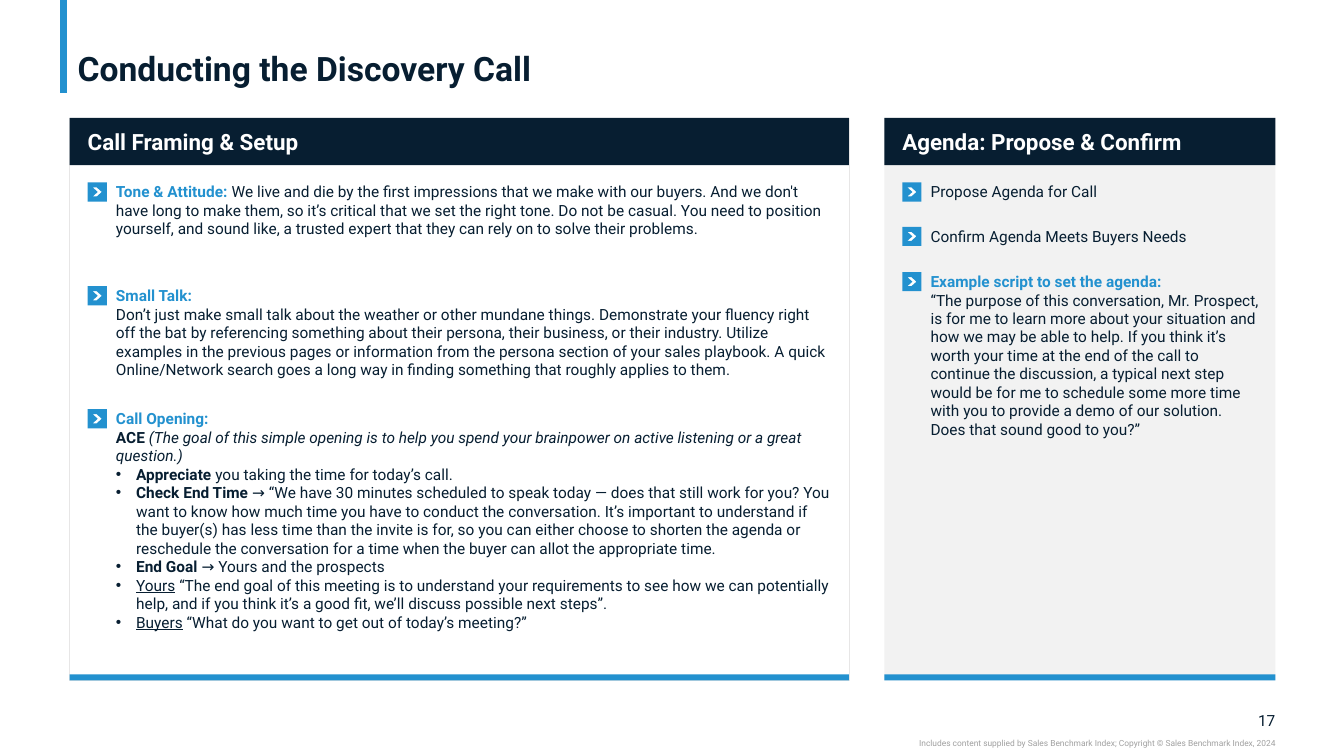
from lxml.etree import SubElement
from pptx import Presentation
from pptx.dml.color import RGBColor
from pptx.enum.shapes import MSO_CONNECTOR, MSO_SHAPE
from pptx.enum.text import MSO_ANCHOR, MSO_AUTO_SIZE, PP_ALIGN
from pptx.oxml.ns import qn
from pptx.util import Inches, Pt

FONT = "Roboto"
NAVY, BLUE, WHITE, PALE, RULE, GREY = "071E31", "2391CF", "FFFFFF", "F2F2F2", "E7E6E6", "A0A0A0"

TITLE = "Conducting the Discovery Call"
PAGE_NUMBER = "17"
CREDIT = "Includes content supplied by Sales Benchmark Index; Copyright © Sales Benchmark Index, 2024"

# Each paragraph is (list level, runs); each run is (text, style).
TONE = [
    (0, [("Tone & Attitude: ", "heading"),
         ("We live and die by the first impressions that we make with our buyers. And we don't have long "
          "to make them, so it’s critical that we set the right tone. Do not be casual. You need to "
          "position yourself, and sound like, a trusted expert that they can rely on to solve their "
          "problems.", "plain")]),
]
SMALL_TALK = [
    (0, [("Small Talk:", "heading")]),
    (0, [("Don’t just make small talk about the weather or other mundane things. Demonstrate your fluency "
          "right off the bat by referencing something about their persona, their business, or their "
          "industry. Utilize examples in the previous pages or information from the persona section of "
          "your sales playbook. A quick Online/Network search goes a long way in finding something that "
          "roughly applies to them.", "plain")]),
]
CALL_OPENING = [
    (0, [("Call Opening:", "heading")]),
    (0, [("ACE ", "bold"),
         ("(The goal of this simple opening is to help you spend your brainpower on active listening or "
          "a great question.)", "italic")]),
    (1, [("Appreciate", "bold"), (" you taking the time for today’s call.", "plain")]),
    (1, [("Check End Time ", "bold"),
         ("→ “We have 30 minutes scheduled to speak today — does that still work for you? You want to "
          "know how much time you have to conduct the conversation. It’s important to understand if the "
          "buyer(s) has less time than the invite is for, so you can either choose to shorten the agenda "
          "or reschedule the conversation for a time when the buyer can allot the appropriate time.",
          "plain")]),
    (1, [("End Goal ", "bold"), ("→ Yours and the prospects", "plain")]),
    (2, [("Yours", "underline"),
         (" “The end goal of this meeting is to understand your requirements to see how we can "
          "potentially help, and if you think it’s a good fit, we’ll discuss possible next steps”.",
          "plain")]),
    (2, [("Buyers", "underline"), (" “What do you want to get out of today’s meeting?”", "plain")]),
]
SCRIPT = [
    (0, [("Example script to set the agenda:", "heading")]),
    (0, [("“The purpose of this conversation, Mr. Prospect, is for me to learn more about your situation "
          "and how we may be able to help. If you think it’s worth your time at the end of the call to "
          "continue the discussion, a typical next step would be for me to schedule some more time with "
          "you to provide a demo of our solution. Does that sound good to you?”", "plain")]),
]

# Items are (top, height, paragraphs), in inches.
PANELS = [
    {"heading": "Call Framing & Setup", "left": 0.69, "width": 7.73, "fill": WHITE, "border": RULE,
     "items": [(1.81, 0.56, TONE), (2.84, 0.93, SMALL_TALK), (4.06, 2.41, CALL_OPENING)]},
    {"heading": "Agenda: Propose & Confirm", "left": 8.77, "width": 3.88, "fill": PALE, "border": None,
     "items": [(1.81, 0.19, [(0, [("Propose Agenda for Call", "plain")])]),
               (2.25, 0.19, [(0, [("Confirm Agenda Meets Buyers Needs", "plain")])]),
               (2.7, 1.67, SCRIPT)]},
]
PANEL_TOP, PANEL_HEIGHT, HEADER_HEIGHT, FOOT_HEIGHT = 1.17, 5.58, 0.47, 0.06
PADDING, ICON_SIZE, ICON_MARGIN, TEXT_INDENT, BULLET_INDENT = 0.18, 0.19, 0.02, 0.46, 0.2
RIGHT_EDGE = 12.65
CHEVRON = [(50, 50), (90, 50), (140, 95), (90, 140), (50, 140), (100, 95)]  # thousandths of an inch

presentation = Presentation()
presentation.slide_width, presentation.slide_height = Inches(13.33), Inches(7.5)
slide = presentation.slides.add_slide(presentation.slide_layouts[1])
title, body = slide.placeholders


def color(value):
    return RGBColor.from_string(value)


def place(shape, left, top, width, height):
    shape.left, shape.top = Inches(left), Inches(top)
    shape.width, shape.height = Inches(width), Inches(height)


def paint(shape, fill, border=None):
    shape.shadow.inherit = False
    shape.fill.solid()
    shape.fill.fore_color.rgb = color(fill)
    if border:
        shape.line.color.rgb = color(border)
        shape.line.width = Pt(0.5)
    else:
        shape.line.fill.background()


def add_box(left, top, width, height, fill, border=None):
    box = slide.shapes.add_shape(
        MSO_SHAPE.RECTANGLE, Inches(left), Inches(top), Inches(width), Inches(height))
    paint(box, fill, border)


def set_bullet(paragraph, level):
    properties = paragraph._p.get_or_add_pPr()
    indent = Inches(BULLET_INDENT) if level else 0
    properties.set("marL", str(indent))
    properties.set("indent", str(-indent))
    if level:
        SubElement(properties, qn("a:buFont"), typeface="Arial")
        SubElement(properties, qn("a:buChar"), char="•")
    else:
        SubElement(properties, qn("a:buNone"))


def write_text(shape, content, size=11, ink=NAVY, bold=False, align=PP_ALIGN.LEFT,
               anchor=MSO_ANCHOR.TOP, side_margin=0, line_spacing=1.0):
    """Fill a shape with a string or a list of (level, runs) paragraphs."""
    if isinstance(content, str):
        content = [(0, [(content, "bold" if bold else "plain")])]
    frame = shape.text_frame
    frame.word_wrap = True
    frame.auto_size = MSO_AUTO_SIZE.NONE
    frame.vertical_anchor = anchor
    frame.margin_left = frame.margin_right = Inches(side_margin)
    frame.margin_top = frame.margin_bottom = 0
    for index, (level, runs) in enumerate(content):
        paragraph = frame.add_paragraph() if index else frame.paragraphs[0]
        set_bullet(paragraph, level)
        paragraph.level = level
        paragraph.alignment = align
        paragraph.line_spacing = line_spacing
        paragraph.space_before = paragraph.space_after = Pt(0)
        for text, style in runs:
            run = paragraph.add_run()
            run.text = text
            font = run.font
            font.name, font.size = FONT, Pt(size)
            font.bold = style in ("heading", "bold")
            font.italic = style == "italic"
            font.underline = style == "underline"
            font.color.rgb = color(BLUE if style == "heading" else ink)


def add_text(left, top, width, height, content, **text_format):
    box = slide.shapes.add_textbox(Inches(left), Inches(top), Inches(width), Inches(height))
    write_text(box, content, **text_format)


def add_icon(left, top):
    """Draw a blue square with a chevron cut out over a white backing."""
    inner = ICON_SIZE - 2 * ICON_MARGIN
    add_box(left + ICON_MARGIN, top + ICON_MARGIN, inner, inner, WHITE)
    side = round(ICON_SIZE * 1000)
    builder = slide.shapes.build_freeform(0, 0, scale=Inches(0.001))
    builder.add_line_segments([(0, side), (side, side), (side, 0)], close=True)
    builder.move_to(*CHEVRON[0])
    builder.add_line_segments(CHEVRON[1:], close=True)
    paint(builder.convert_to_shape(Inches(left), Inches(top)), BLUE)


def add_panel(panel):
    left, width = panel["left"], panel["width"]
    inner_left = left + PADDING
    text_left = left + TEXT_INDENT
    text_width = width - TEXT_INDENT - 0.16
    add_box(left, PANEL_TOP, width, PANEL_HEIGHT, panel["fill"], panel["border"])
    add_box(left, PANEL_TOP, width, HEADER_HEIGHT, NAVY)
    add_text(inner_left, PANEL_TOP + 0.11, width - 2 * PADDING, 0.25, panel["heading"],
             size=16, ink=WHITE, bold=True, anchor=MSO_ANCHOR.MIDDLE)
    for top, height, content in panel["items"]:
        if content is CALL_OPENING:
            place(body, text_left, top, text_width, height)
            write_text(body, content)
            body.element.getparent().append(body.element)  # bring in front of the panel
        else:
            add_text(text_left, top, text_width, height, content)
        add_icon(inner_left, top)
    add_box(left, PANEL_TOP + PANEL_HEIGHT - FOOT_HEIGHT, width, FOOT_HEIGHT, BLUE)


accent = slide.shapes.add_connector(
    MSO_CONNECTOR.STRAIGHT, Inches(0.63), 0, Inches(0.63), Inches(0.92))
accent.line.color.rgb = color(BLUE)
accent.line.width = Pt(5)
SubElement(accent.element.spPr, qn("a:effectLst"))

place(title, 0.67, 0.04, 11.99, 0.84)
write_text(title, TITLE, size=24, bold=True, anchor=MSO_ANCHOR.BOTTOM, side_margin=0.1, line_spacing=0.9)

for panel in PANELS:
    add_panel(panel)

add_text(RIGHT_EDGE - 0.33, 7.05, 0.33, 0.19, PAGE_NUMBER, align=PP_ALIGN.RIGHT, anchor=MSO_ANCHOR.MIDDLE)
add_text(RIGHT_EDGE - 5.16, 7.32, 5.16, 0.1, CREDIT, size=6, ink=GREY, align=PP_ALIGN.RIGHT)

presentation.save("out.pptx")
